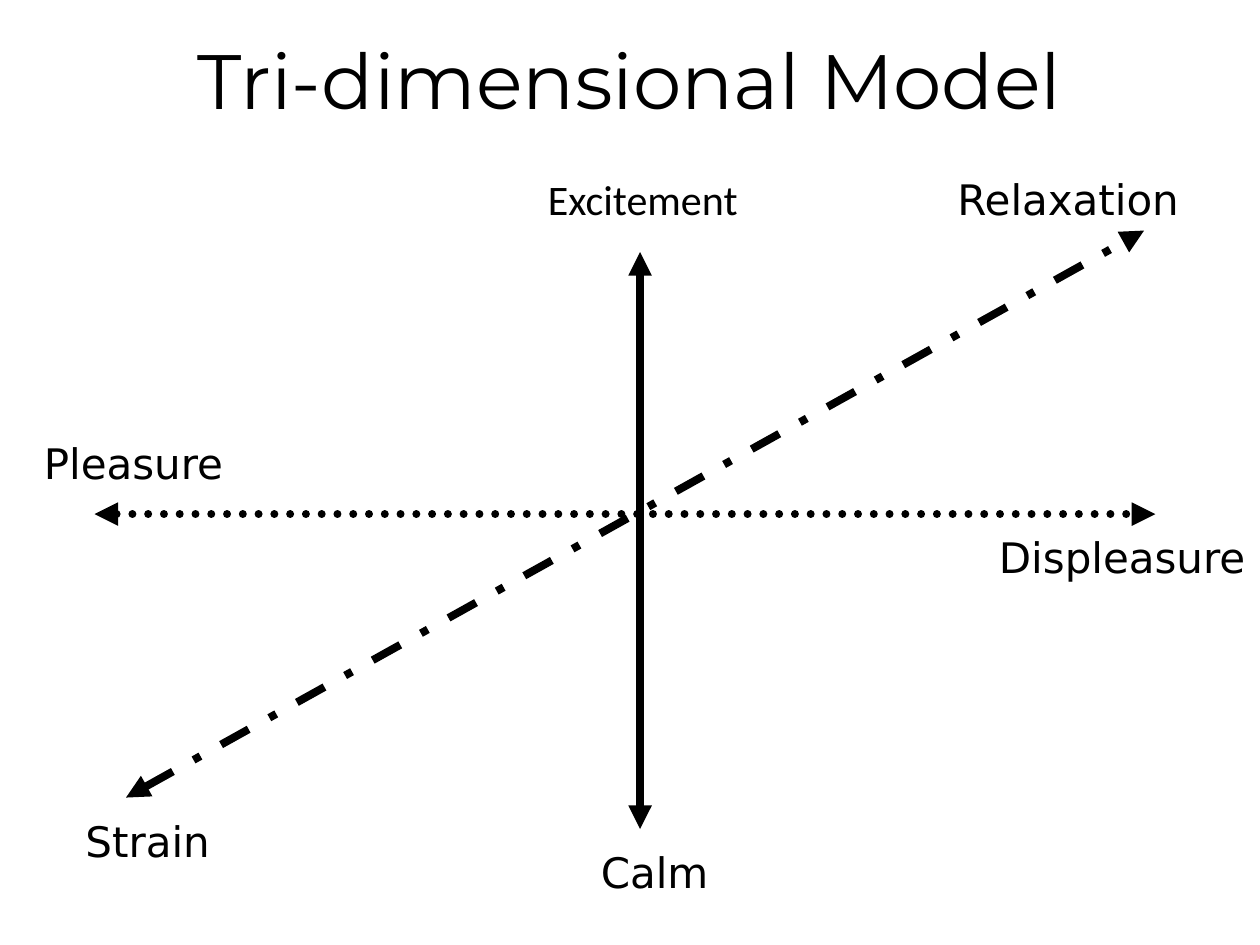
"""Build the tri-dimensional model slide: three crossing axes with labelled ends."""
from lxml.etree import SubElement
from pptx import Presentation
from pptx.dml.color import RGBColor
from pptx.enum.dml import MSO_LINE_DASH_STYLE as Dash
from pptx.enum.shapes import MSO_CONNECTOR as Connector
from pptx.enum.text import MSO_ANCHOR as Anchor, PP_ALIGN as Align
from pptx.oxml.ns import qn
from pptx.util import Inches, Pt

BLACK = RGBColor(0, 0, 0)
LABEL_SIZE = (2.17, 0.58)
HANGING_INDENT = 0.38

TITLE = "Tri-dimensional Model"
LABELS = [
    ("Excitement", 4.25, 1.33, "Calibri"),
    ("Pleasure", 0.25, 3.42, "DejaVu Sans"),
    ("Relaxation", 7.5, 1.33, "DejaVu Sans"),
    ("Displeasure", 7.83, 4.17, "DejaVu Sans"),
    ("Calm", 4.67, 6.67, "DejaVu Sans"),
    ("Strain", 0.58, 6.42, "DejaVu Sans"),
]
AXES = [
    ((0.75, 4.08), (9.17, 4.08), Dash.ROUND_DOT),
    ((5.08, 2), (5.08, 6.58), Dash.SOLID),
    ((1, 6.33), (9.08, 1.83), Dash.DASH_DOT),
]


def add_text(page, text, place, font, size, align=Align.LEFT, anchor=Anchor.TOP, hanging=0):
    box = page.shapes.add_textbox(*map(Inches, place))
    frame = box.text_frame
    frame.word_wrap = True
    frame.vertical_anchor = anchor
    para = frame.paragraphs[0]
    para.alignment = align
    if hanging:
        properties = para._p.get_or_add_pPr()
        properties.set("marL", str(Inches(hanging)))
        properties.set("indent", str(-Inches(hanging)))
        before = SubElement(properties, qn("a:spcBef"))
        SubElement(before, qn("a:spcPct"), val="20000")
    span = para.add_run()
    span.text = text
    span.font.name = font
    span.font.size = Pt(size)
    span.font.color.rgb = BLACK


def add_axis(page, start, end, dash):
    axis = page.shapes.add_connector(Connector.STRAIGHT, *map(Inches, start + end))
    axis.line.color.rgb = BLACK
    axis.line.width = Pt(4.5)
    axis.line.dash_style = dash
    outline = axis.line._get_or_add_ln()
    if dash == Dash.ROUND_DOT:
        outline.set("cap", "rnd")
    for tip in ("a:headEnd", "a:tailEnd"):
        SubElement(outline, qn(tip), type="triangle")
    SubElement(axis._element.spPr, qn("a:effectLst"))


def main():
    deck = Presentation()
    deck.slide_width, deck.slide_height = Inches(10), Inches(7.5)
    page = deck.slides.add_slide(deck.slide_layouts[6])
    add_text(page, TITLE, (0.5, 0, 9, 1.25), "Montserrat", 44,
             align=Align.CENTER, anchor=Anchor.MIDDLE)
    for start, end, dash in AXES:
        add_axis(page, start, end, dash)
    for text, left, top, font in LABELS:
        add_text(page, text, (left, top, *LABEL_SIZE), font, 24, hanging=HANGING_INDENT)
    deck.save("out.pptx")


if __name__ == "__main__":
    main()
